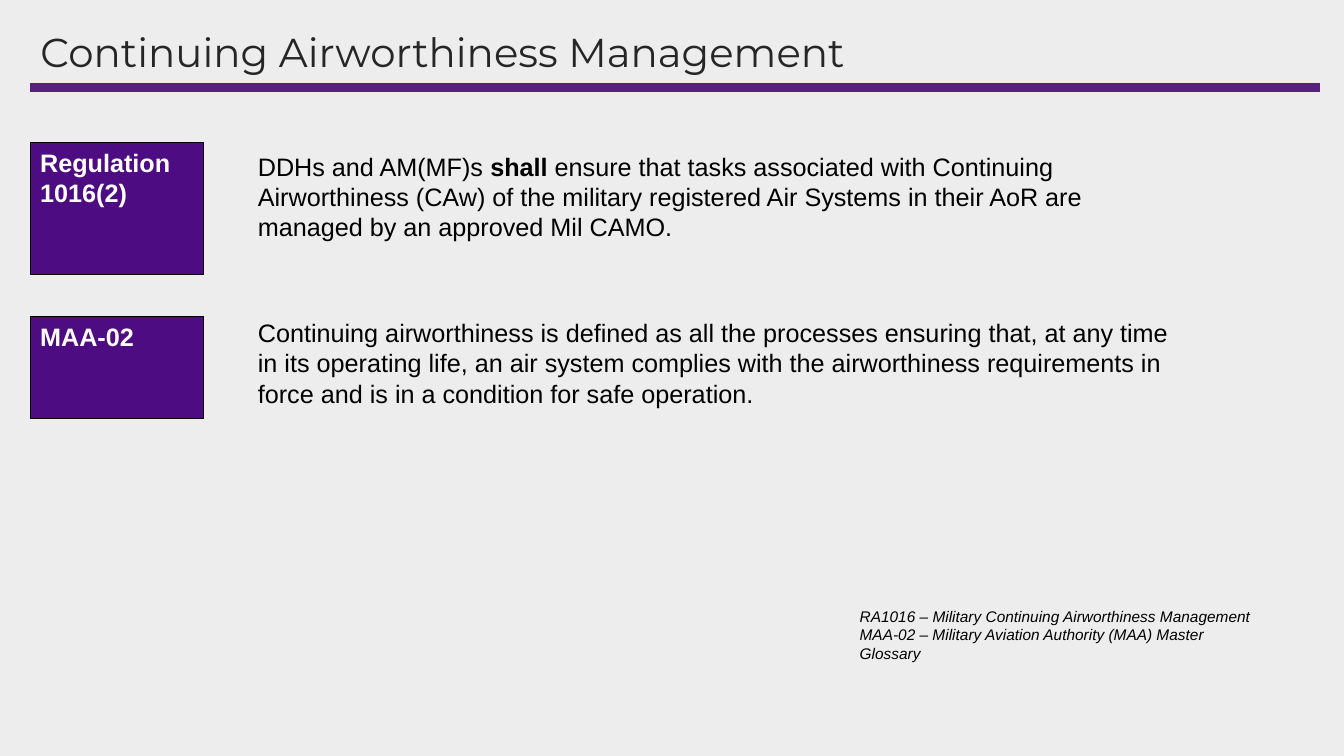
from lxml.etree import SubElement
from pptx import Presentation
from pptx.dml.color import RGBColor
from pptx.enum.shapes import MSO_CONNECTOR, MSO_SHAPE
from pptx.enum.text import MSO_ANCHOR, PP_ALIGN
from pptx.oxml.ns import qn
from pptx.util import Pt

BACKGROUND = RGBColor(0xED, 0xED, 0xED)
RULE_PURPLE = RGBColor(0x56, 0x22, 0x7D)
LABEL_PURPLE = RGBColor(0x4E, 0x0C, 0x82)
TITLE_GREY = RGBColor(0x26, 0x26, 0x26)
BLACK = RGBColor(0, 0, 0)
WHITE = RGBColor(0xFF, 0xFF, 0xFF)

LEFT, CONTENT_WIDTH = 21.6, 921.6
LABEL_WIDTH = 123.84
STATEMENT_LEFT, STATEMENT_WIDTH, STATEMENT_HEIGHT = 177.12, 678.96, 72.72

# label, label top, label height, statement top, statement spans as (text, bold)
ENTRIES = [
    ("Regulation 1016(2)", 101.52, 94.32, 104.4, [
        ("DDHs and AM(MF)s ", False),
        ("shall ", True),
        ("ensure that tasks associated with Continuing Airworthiness (CAw) of the "
         "military registered Air Systems in their AoR are managed by an approved "
         "Mil CAMO.", False),
    ]),
    ("MAA-02", 226.08, 72.72, 223.2, [
        ("Continuing airworthiness is defined as all the processes ensuring that, "
         "at any time in its operating life, an air system complies with the "
         "airworthiness requirements in force and is in a condition for safe "
         "operation.", False),
    ]),
]
REFERENCES = [
    "RA1016 – Military Continuing Airworthiness Management",
    "MAA-02 – Military Aviation Authority (MAA) Master Glossary",
]


class SlideBuilder:
    title_format = {"name": "Montserrat", "size": Pt(28.8), "bold": False}
    label_format = {"name": "Arial", "size": Pt(18), "bold": True}
    statement_format = {"name": "Arial", "size": Pt(18)}
    reference_format = {"name": "Arial", "size": Pt(11), "italic": True}

    def __init__(self, deck):
        self.page = deck.slides.add_slide(deck.slide_layouts[5])
        fill = self.page.background.fill
        fill.solid()
        fill.fore_color.rgb = BACKGROUND

    def fill_text(self, box, paragraphs, format_values, color, anchor=MSO_ANCHOR.TOP):
        """Fill a box with paragraphs, each a list of (text, bold) spans."""
        frame = box.text_frame
        frame.word_wrap = True
        frame.vertical_anchor = anchor
        for index, spans in enumerate(paragraphs):
            para = frame.add_paragraph() if index else frame.paragraphs[0]
            para.alignment = PP_ALIGN.LEFT
            for text, bold in spans:
                span = para.add_run()
                span.text = text
                for name, value in {"bold": bold, **format_values}.items():
                    setattr(span.font, name, value)
                span.font.color.rgb = color

    def title(self, text, left, top, width, height):
        box = self.page.shapes.title
        frame_values = {"left": left, "top": top, "width": width, "height": height}
        for name, value in frame_values.items():
            setattr(box, name, Pt(value))
        self.fill_text(box, [[(text, False)]], self.title_format, TITLE_GREY,
                       MSO_ANCHOR.MIDDLE)
        box.text_frame.paragraphs[0].line_spacing = 0.9

    def rule(self, left, top, width):
        line = self.page.shapes.add_connector(
            MSO_CONNECTOR.STRAIGHT, Pt(left), Pt(top), Pt(left + width), Pt(top))
        line.line.color.rgb = RULE_PURPLE
        line.line.width = Pt(6)
        SubElement(line._element.spPr, qn("a:effectLst"))

    def label(self, text, left, top, width, height):
        box = self.page.shapes.add_shape(
            MSO_SHAPE.RECTANGLE, Pt(left), Pt(top), Pt(width), Pt(height))
        box.shadow.inherit = False
        box.fill.solid()
        box.fill.fore_color.rgb = LABEL_PURPLE
        box.line.color.rgb = BLACK
        box.line.width = Pt(0.75)
        self.fill_text(box, [[(text, True)]], self.label_format, WHITE)

    def text(self, paragraphs, format_values, left, top, width, height):
        box = self.page.shapes.add_textbox(Pt(left), Pt(top), Pt(width), Pt(height))
        self.fill_text(box, paragraphs, format_values, BLACK)


def main():
    deck = Presentation()
    deck.slide_width, deck.slide_height = Pt(960), Pt(540)
    builder = SlideBuilder(deck)
    builder.rule(LEFT, 62.64, CONTENT_WIDTH)
    builder.title("Continuing Airworthiness Management", LEFT, 20.16, CONTENT_WIDTH, 38.16)
    for label, label_top, label_height, statement_top, spans in ENTRIES:
        builder.label(label, LEFT, label_top, LABEL_WIDTH, label_height)
        builder.text([spans], builder.statement_format, STATEMENT_LEFT,
                     statement_top, STATEMENT_WIDTH, STATEMENT_HEIGHT)
    builder.text([[(reference, False)] for reference in REFERENCES],
                 builder.reference_format, 606.96, 429.84, 296.64, 33.84)
    deck.save("out.pptx")


if __name__ == "__main__":
    main()
